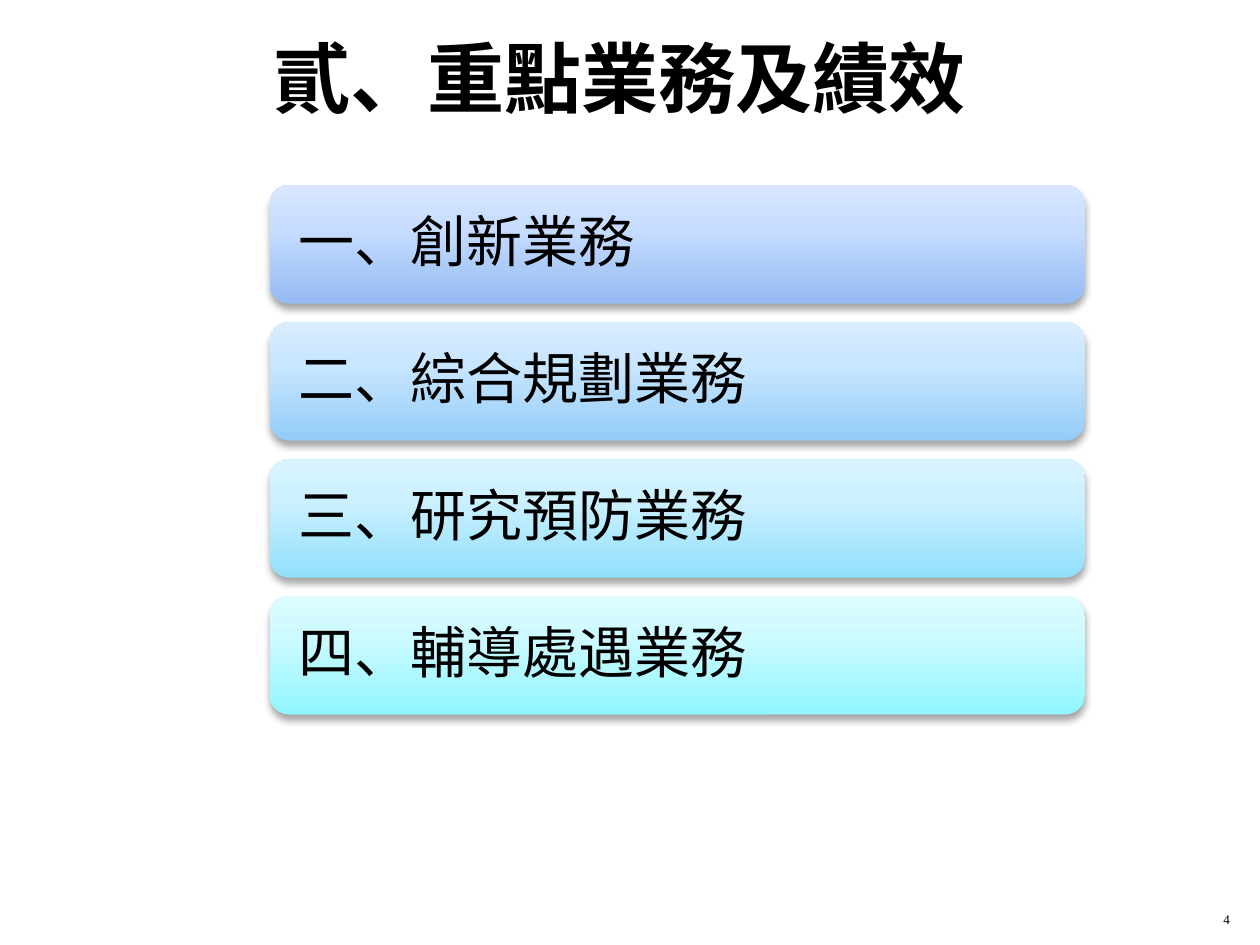
import copy

import lxml.etree
import pptx
import pptx.dml.color
import pptx.enum.shapes
import pptx.enum.text
import pptx.oxml.ns
import pptx.util

Inches, Pt = pptx.util.Inches, pptx.util.Pt
ALIGN, ANCHOR = pptx.enum.text.PP_ALIGN, pptx.enum.text.MSO_ANCHOR
qn = pptx.oxml.ns.qn

TITLE = "貳、重點業務及績效"
PAGE_NUMBER = "4"
# Each topic with its gradient, from the bottom edge up
TOPICS = [
    ("一、創新業務", ("94BBF3", "C8DDFF", "D8E7FF")),
    ("二、綜合規劃業務", ("93CCF7", "C9E6FF", "D9EDFF")),
    ("三、研究預防業務", ("91E0FC", "CBF0FF", "DAF4FF")),
    ("四、輔導處遇業務", ("91F6FF", "CCFAFF", "DCFCFF")),
]
GRADIENT_POSITIONS = (0, 0.65, 1)
FONT = "Times New Roman"
BAR_LEFT, BAR_TOP, BAR_WIDTH, BAR_HEIGHT = 2.14, 1.47, 6.47, 0.94
BAR_PITCH = 1.087
BAR_INSET = 0.18


def rgb(hex_color):
    return pptx.dml.color.RGBColor.from_string(hex_color)


def write(shape, text, size, align, anchor, bold=False):
    frame = shape.text_frame
    frame.word_wrap = True
    frame.vertical_anchor = anchor
    paragraph = frame.paragraphs[0]
    paragraph.text = text
    paragraph.alignment = align
    paragraph.font.name = FONT
    paragraph.font.size = Pt(size)
    paragraph.font.bold = bold
    paragraph.font.color.rgb = rgb("000000")
    return paragraph


def fill_gradient(shape, colors):
    shape.fill.gradient()
    shape.fill.gradient_angle = 90
    stop_list = shape._element.spPr.find(".//" + qn("a:gsLst"))
    stop_list.append(copy.deepcopy(stop_list[-1]))
    for stop, position, color in zip(
            shape.fill.gradient_stops, GRADIENT_POSITIONS, colors):
        stop.position = position
        stop.color.rgb = rgb(color)


def drop_shadow(shape):
    shape.shadow.inherit = False
    effects = shape._element.spPr.find(qn("a:effectLst"))
    shadow = lxml.etree.SubElement(
        effects, qn("a:outerShdw"), blurRad=str(Pt(4)), dist=str(Pt(3)),
        dir="5400000", rotWithShape="0")
    color = lxml.etree.SubElement(shadow, qn("a:srgbClr"), val="000000")
    lxml.etree.SubElement(color, qn("a:alpha"), val="35000")


def add_topic_bar(slide, row, topic, colors):
    bar = slide.shapes.add_shape(
        pptx.enum.shapes.MSO_SHAPE.ROUNDED_RECTANGLE,
        Inches(BAR_LEFT), Inches(BAR_TOP + row * BAR_PITCH),
        Inches(BAR_WIDTH), Inches(BAR_HEIGHT))
    fill_gradient(bar, colors)
    bar.line.fill.background()
    drop_shadow(bar)
    label = write(bar, topic, 32, ALIGN.LEFT, ANCHOR.MIDDLE)
    label.line_spacing = 0.9
    frame = bar.text_frame
    frame.margin_left = frame.margin_right = Inches(BAR_INSET)
    frame.margin_top = frame.margin_bottom = Inches(BAR_INSET)


def main():
    deck = pptx.Presentation()
    deck.slide_width, deck.slide_height = Inches(10), Inches(7.5)
    slide = deck.slides.add_slide(deck.slide_layouts[5])

    title = slide.shapes.title
    title.left, title.top = Inches(0.42), Inches(0.14)
    title.width, title.height = Inches(9), Inches(0.94)
    write(title, TITLE, 44, ALIGN.CENTER, ANCHOR.MIDDLE, bold=True)

    for row, (topic, colors) in enumerate(TOPICS):
        add_topic_bar(slide, row, topic, colors)

    number = slide.shapes.add_textbox(
        Inches(9.46), Inches(7.01), Inches(0.4), Inches(0.4))
    write(number, PAGE_NUMBER, 7.5, ALIGN.RIGHT, ANCHOR.BOTTOM)
    deck.save("out.pptx")


if __name__ == "__main__":
    main()
